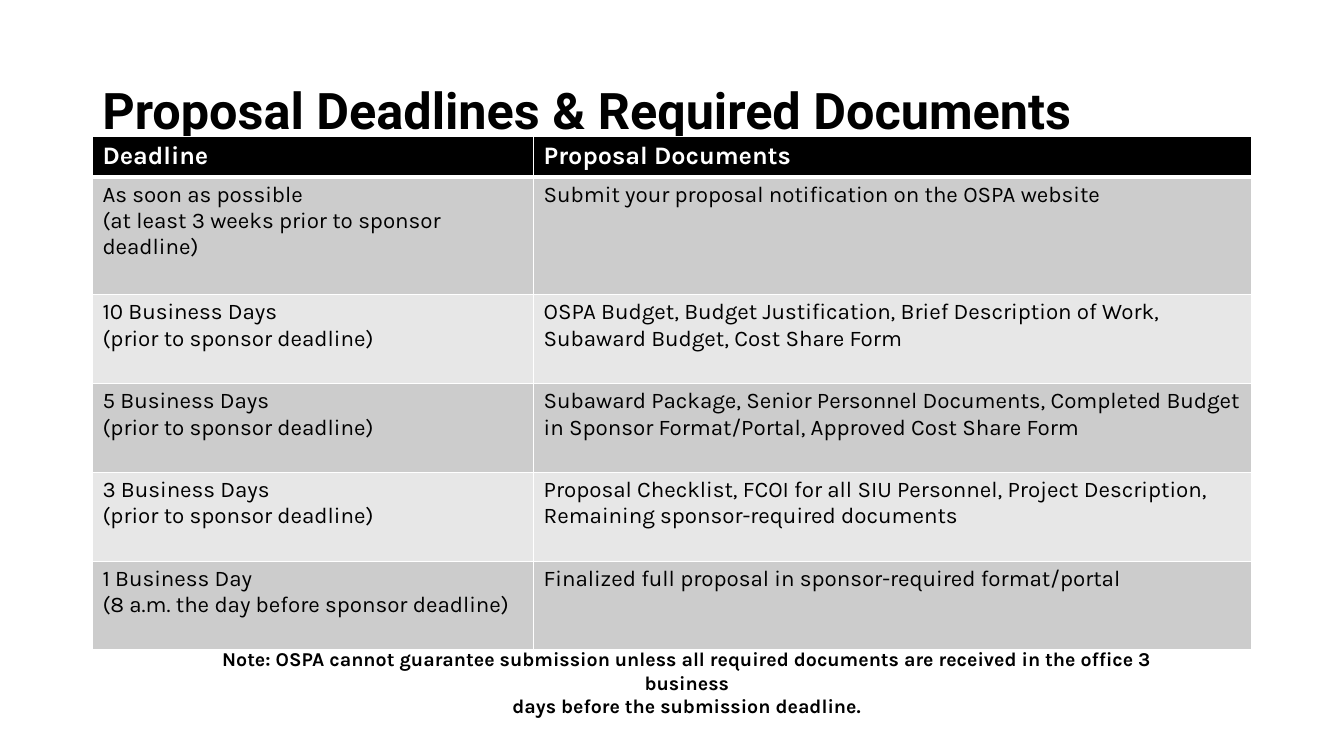
from lxml.etree import SubElement
from pptx import Presentation
from pptx.dml.color import RGBColor
from pptx.enum.text import MSO_ANCHOR, PP_ALIGN
from pptx.oxml.ns import qn
from pptx.util import Cm, Pt

DEADLINES = [
    ("As soon as possible\v(at least 3 weeks prior to sponsor deadline)",
     "Submit your proposal notification on the OSPA website"),
    ("10 Business Days\v(prior to sponsor deadline)",
     "OSPA Budget, Budget Justification, Brief Description of Work,\vSubaward Budget, Cost Share Form"),
    ("5 Business Days\v(prior to sponsor deadline)",
     "Subaward Package, Senior Personnel Documents, Completed Budget in Sponsor Format/Portal, "
     "Approved Cost Share Form"),
    ("3 Business Days\v(prior to sponsor deadline)",
     "Proposal Checklist, FCOI for all SIU Personnel, Project Description,\v"
     "Remaining sponsor-required documents"),
    ("1 Business Day\n(8 a.m. the day before sponsor deadline)",
     "Finalized full proposal in sponsor-required format/portal"),
]
NOTE = ("Note: OSPA cannot guarantee submission unless all required documents are received "
        "in the office 3 business\ndays before the submission deadline.")


def color(code):
    """Turn a hex string into a colour."""
    return RGBColor.from_string(code)


def style_text(frame, font, size, code, bold):
    """Set one font on every paragraph of a text frame."""
    for para in frame.paragraphs:
        para.font.name = font
        para.font.size = Pt(size)
        para.font.bold = bold
        para.font.color.rgb = color(code)


def add_border(cell, side, width, code):
    """Draw one border of a table cell."""
    line = SubElement(cell._tc.get_or_add_tcPr(), qn(f"a:ln{side}"), w=str(Pt(width)))
    fill = SubElement(line, qn("a:solidFill"))
    SubElement(fill, qn("a:srgbClr"), val=code)


def add_title(page, left, top, width, height):
    """Place the slide title in its box."""
    frame = page.shapes.add_textbox(left, top, width, height).text_frame
    frame.word_wrap = True
    frame.vertical_anchor = MSO_ANCHOR.MIDDLE
    frame.text = "Proposal Deadlines & Required Documents"
    frame.paragraphs[0].line_spacing = 0.9
    style_text(frame, "Roboto", 36, "000000", True)


def fill_cell(cell, text, is_header, shade):
    """Write, border and shade one table cell."""
    cell.text = text
    style_text(cell.text_frame, "Karla", 18 if is_header else 16,
               "FFFFFF" if is_header else "000000", is_header)
    for side in "LRTB":
        add_border(cell, side, 3 if is_header and side == "B" else 1, "FFFFFF")
    cell.fill.solid()
    cell.fill.fore_color.rgb = color(shade)


def add_deadline_table(page, left, top, width, height):
    """Place the table of deadlines and documents in its box."""
    rows = [("Deadline", "Proposal Documents")] + DEADLINES
    table = page.shapes.add_table(len(rows), 2, left, top, width, height).table
    table.columns[0].width = Cm(11.12)
    table.columns[1].width = width - Cm(11.12)
    header_height, first_height = Cm(1.03), Cm(2.96)
    other_height = (height - header_height - first_height) // (len(rows) - 2)
    heights = [header_height, first_height] + [other_height] * (len(rows) - 2)
    for index, (texts, row_height) in enumerate(zip(rows, heights)):
        table.rows[index].height = row_height
        shade = "000000" if index == 0 else ("E7E7E7", "CCCCCC")[index % 2]
        for column, text in enumerate(texts):
            fill_cell(table.cell(index, column), text, index == 0, shade)


def add_note(page, left, top, width, height):
    """Place the centred note in its box."""
    frame = page.shapes.add_textbox(left, top, width, height).text_frame
    frame.word_wrap = True
    frame.text = NOTE
    for para in frame.paragraphs:
        para.alignment = PP_ALIGN.CENTER
    style_text(frame, "Karla", 14, "000000", True)


def main():
    """Build and save the deadlines slide."""
    deck = Presentation()
    deck.slide_width, deck.slide_height = Cm(33.87), Cm(19.05)
    page = deck.slides.add_slide(deck.slide_layouts[6])
    add_title(page, Cm(2.33), Cm(1.02), Cm(29.21), Cm(3.68))
    add_deadline_table(page, Cm(2.33), Cm(3.43), Cm(29.21), Cm(12.95))
    add_note(page, Cm(4.75), Cm(16.18), Cm(25.12), Cm(1.45))
    deck.save("out.pptx")


if __name__ == "__main__":
    main()
